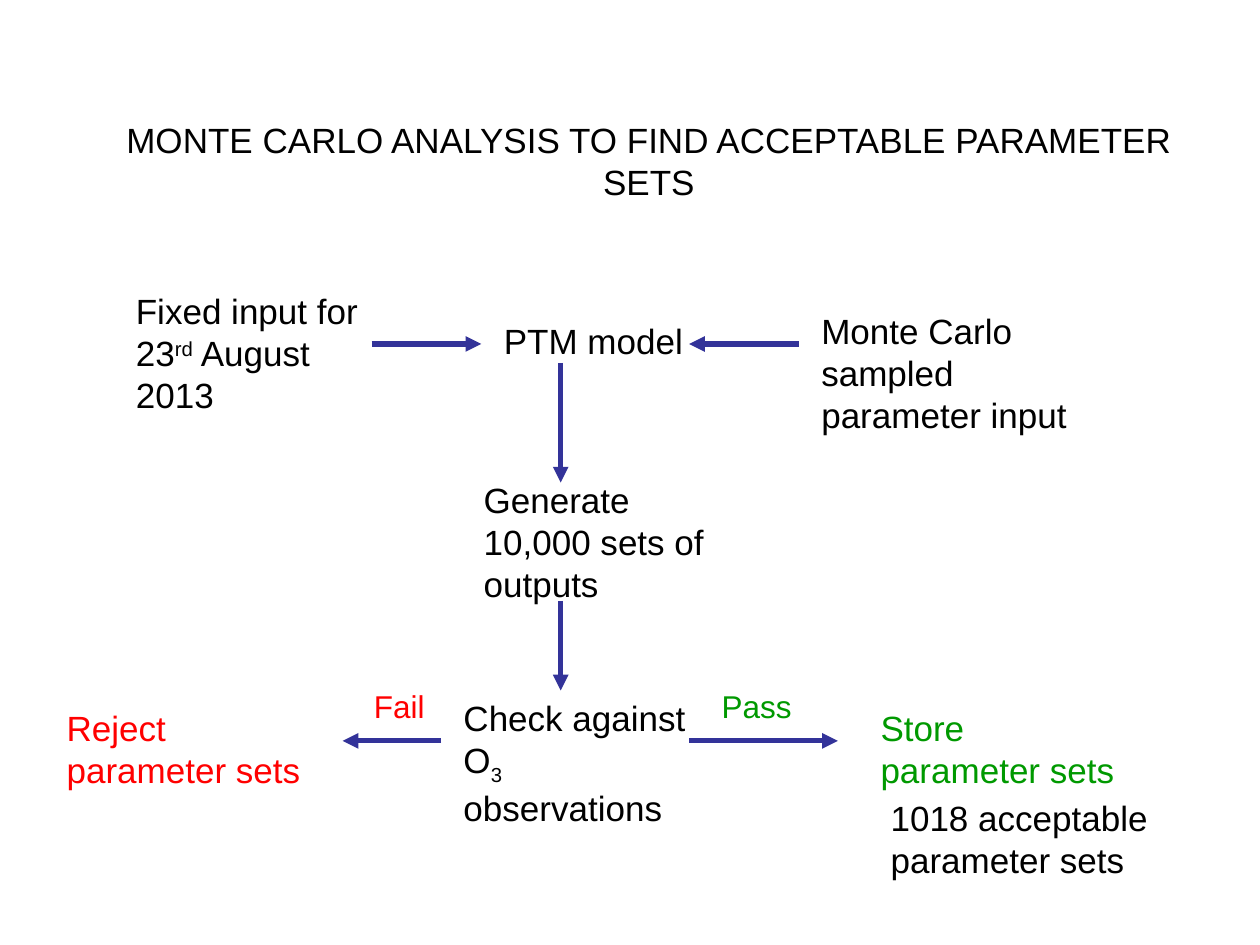
from lxml.etree import SubElement
from pptx import Presentation
from pptx.dml.color import RGBColor
from pptx.enum.shapes import MSO_CONNECTOR
from pptx.enum.text import MSO_ANCHOR, PP_ALIGN
from pptx.oxml.ns import qn
from pptx.util import Inches, Pt

BLACK = RGBColor(0x00, 0x00, 0x00)
RED = RGBColor(0xFF, 0x00, 0x00)
GREEN = RGBColor(0x00, 0x99, 0x00)
BLUE = RGBColor(0x33, 0x33, 0x99)

TITLE = "MONTE CARLO ANALYSIS TO FIND ACCEPTABLE PARAMETER SETS"
TITLE_BOX = (0.9, 0.84, 8.5, 0.87)

# (text, or (text, baseline shift in %) pieces), (left, top, width, height), size, colour
LABELS = [
    ("PTM model", (3.9, 2.49, 1.73, 0.43), 20, BLACK),
    ([("Fixed input for 23", 0), ("rd", 30), (" August 2013", 0)],
     (0.98, 2.25, 2.12, 1.11), 20, BLACK),
    ("Monte Carlo sampled parameter input", (6.42, 2.41, 2.44, 1.11), 20, BLACK),
    ("Generate 10,000 sets of outputs", (3.74, 3.75, 2.05, 1.1), 20, BLACK),
    ([("Check against O", 0), ("3", -25), (" observations", 0)],
     (3.58, 5.48, 2.12, 1.1), 20, BLACK),
    ("Store parameter sets", (6.89, 5.56, 2.2, 0.77), 20, GREEN),
    ("Reject parameter sets", (0.43, 5.56, 2.12, 0.77), 20, RED),
    ("Fail", (2.87, 5.4, 0.87, 0.4), 18, RED),
    ("Pass", (5.63, 5.4, 0.94, 0.4), 18, GREEN),
    ("1018 acceptable parameter sets", (6.97, 6.27, 2.36, 0.77), 20, BLACK),
]

INPUT_Y, FLOW_X, CHECK_Y = 2.73, 4.45, 5.88
ARROWS = [
    ((2.95, INPUT_Y), (3.82, INPUT_Y)),
    ((6.34, INPUT_Y), (5.47, INPUT_Y)),
    ((FLOW_X, 2.88), (FLOW_X, 3.83)),
    ((FLOW_X, 4.77), (FLOW_X, 5.48)),
    ((3.5, CHECK_Y), (2.72, CHECK_Y)),
    ((5.47, CHECK_Y), (6.65, CHECK_Y)),
]


def add_label(slide, text, box, size, colour):
    """Add a wrapped text box and return its text frame."""
    frame = slide.shapes.add_textbox(*map(Inches, box)).text_frame
    frame.word_wrap = True
    pieces = [(text, 0)] if isinstance(text, str) else text
    for words, shift in pieces:
        run = frame.paragraphs[0].add_run()
        run.text = words
        run.font.name = "Arial"
        run.font.size = Pt(size)
        run.font.color.rgb = colour
        if shift:
            run.font._element.set("baseline", str(shift * 1000))
    return frame


def add_arrow(slide, start, end):
    line = slide.shapes.add_connector(
        MSO_CONNECTOR.STRAIGHT, *map(Inches, start + end))
    line.line.color.rgb = BLUE
    line.line.width = Pt(3)
    SubElement(line.line._get_or_add_ln(), qn("a:tailEnd"), type="triangle")
    SubElement(line._element.spPr, qn("a:effectLst"))


def main():
    deck = Presentation()
    deck.slide_width, deck.slide_height = Inches(10), Inches(7.5)
    slide = deck.slides.add_slide(deck.slide_layouts[6])

    title = add_label(slide, TITLE, TITLE_BOX, 20, BLACK)
    title.vertical_anchor = MSO_ANCHOR.MIDDLE
    title.paragraphs[0].alignment = PP_ALIGN.CENTER

    for label in LABELS:
        add_label(slide, *label)
    for start, end in ARROWS:
        add_arrow(slide, start, end)

    deck.save("out.pptx")


if __name__ == "__main__":
    main()
